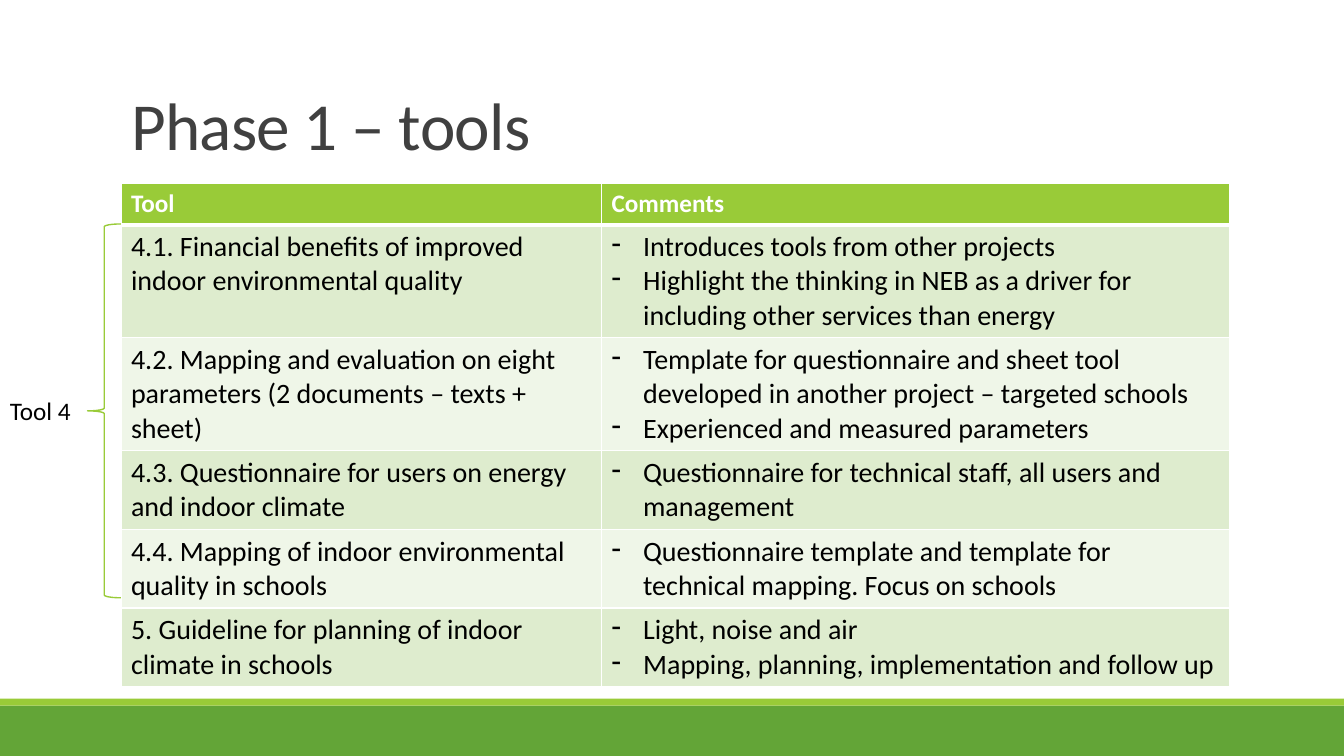
import pptx
import pptx.util
import pptx.dml.color
import pptx.enum.shapes
import pptx.enum.text
import pptx.oxml
import pptx.oxml.ns

Pt = pptx.util.Pt
qn = pptx.oxml.ns.qn

TITLE = "Phase 1 – tools"
HEADER = ("Tool", "Comments")
ROWS = [
    ("4.1. Financial benefits of improved indoor environmental quality",
     ["Introduces tools from other projects",
      "Highlight the thinking in NEB as a driver for including other services than energy"], 3),
    ("4.2. Mapping and evaluation on eight parameters (2 documents – texts + sheet)",
     ["Template for questionnaire and sheet tool developed in another project – targeted schools",
      "Experienced and measured parameters"], 3),
    ("4.3. Questionnaire for users on energy and indoor climate",
     ["Questionnaire for technical staff, all users and management"], 2),
    ("4.4. Mapping of indoor environmental quality in schools",
     ["Questionnaire template and template for technical mapping. Focus on schools"], 2),
    ("5. Guideline for planning of indoor climate in schools",
     ["Light, noise and air", "Mapping, planning, implementation and follow up"], 2),
]
BRACE_LABEL = "Tool 4"
LIME, GREEN, WHITE = "99CB38", "63A537", "FFFFFF"
BANDS = ("DEECCE", "EFF6E8")
SLIDE_W, SLIDE_H = 960, 540
TABLE_X, TABLE_Y, COL_W = 86.4, 131.04, (343.3, 448.7)
HEADER_H, LINE_H, CELL_PAD = 29.5, 24, 7.2
INDENT = 22.5


def rgb(color):
    return pptx.dml.color.RGBColor.from_string(color)


def write(p, text, size=20, color="000000", bold=False, bullet=None, spc=None):
    if bullet:
        pPr = p._p.get_or_add_pPr()
        pPr.set("marL", str(Pt(INDENT)))
        pPr.set("indent", str(-Pt(INDENT)))
        pPr.append(pptx.oxml.parse_xml(
            f'<a:buChar {pptx.oxml.ns.nsdecls("a")} char="{bullet}"/>'))
    r = p.add_run()
    r.text = text
    r.font.name = "Calibri"
    r.font.size = Pt(size)
    r.font.bold = bold
    r.font.color.rgb = rgb(color)
    if spc is not None:
        r._r.get_or_add_rPr().set("spc", str(round(spc * 100)))


def add_shape(s, kind, x, y, w, h, fill=None, line=None):
    sp = s.shapes.add_shape(kind, Pt(x), Pt(y), Pt(w), Pt(h))
    sp.shadow.inherit = False
    if fill:
        sp.fill.solid()
        sp.fill.fore_color.rgb = rgb(fill)
    else:
        sp.fill.background()
    if line:
        sp.line.color.rgb = rgb(line)
        sp.line.width = Pt(1)
    else:
        sp.line.fill.background()


def style_cell(cell, fill, top=1, bottom=1):
    tcPr = cell._tc.get_or_add_tcPr()
    for side, width in (("L", 1), ("R", 1), ("T", top), ("B", bottom)):
        tcPr.append(pptx.oxml.parse_xml(
            f'<a:ln{side} {pptx.oxml.ns.nsdecls("a")} w="{Pt(width)}"><a:solidFill>'
            f'<a:srgbClr val="{WHITE}"/></a:solidFill></a:ln{side}>'))
    cell.fill.solid()
    cell.fill.fore_color.rgb = rgb(fill)


def fill_table(s):
    heights = [HEADER_H] + [LINE_H * lines + CELL_PAD for _, _, lines in ROWS]
    table = s.shapes.add_table(len(heights), 2, Pt(TABLE_X), Pt(TABLE_Y),
                               Pt(sum(COL_W)), Pt(sum(heights))).table
    for col, width in zip(table.columns, COL_W):
        col.width = Pt(width)
    for row, height in zip(table.rows, heights):
        row.height = Pt(height)
    for c, text in enumerate(HEADER):
        cell = table.cell(0, c)
        style_cell(cell, LIME, bottom=3)
        write(cell.text_frame.paragraphs[0], text, size=18, color=WHITE, bold=True)
    for i, (tool, comments, _) in enumerate(ROWS, 1):
        for c, texts in enumerate(([tool], comments)):
            cell = table.cell(i, c)
            style_cell(cell, BANDS[(i - 1) % 2], top=3 if i == 1 else 1)
            tf = cell.text_frame
            for k, text in enumerate(texts):
                p = tf.add_paragraph() if k else tf.paragraphs[0]
                write(p, text, bullet="-" if c else None)


def main():
    prs = pptx.Presentation()
    prs.slide_width, prs.slide_height = Pt(SLIDE_W), Pt(SLIDE_H)
    s = prs.slides.add_slide(prs.slide_layouts[5])
    shapes = pptx.enum.shapes.MSO_SHAPE

    add_shape(s, shapes.RECTANGLE, 0, 504, SLIDE_W, 36, fill=GREEN)
    add_shape(s, shapes.RECTANGLE, 0, 499, SLIDE_W, 5, fill=LIME)

    title = s.shapes.title
    title.left, title.top, title.width, title.height = Pt(TABLE_X), Pt(6.5), Pt(792), Pt(114.5)
    tf = title.text_frame
    tf.auto_size = pptx.enum.text.MSO_AUTO_SIZE.NONE
    tf.vertical_anchor = pptx.enum.text.MSO_ANCHOR.BOTTOM
    p = tf.paragraphs[0]
    p.alignment = pptx.enum.text.PP_ALIGN.LEFT
    p.line_spacing = 0.85
    write(p, TITLE, size=48, color="404040", spc=-0.5)

    fill_table(s)

    add_shape(s, shapes.LEFT_BRACE, 62.6, 160, 23.8, 267, line=LIME)
    label = s.shapes.add_textbox(Pt(0), Pt(278.6), Pt(62.6), Pt(29))
    tf = label.text_frame
    tf.word_wrap = True
    tf.auto_size = pptx.enum.text.MSO_AUTO_SIZE.SHAPE_TO_FIT_TEXT
    write(tf.paragraphs[0], BRACE_LABEL, size=18)

    prs.save("out.pptx")


if __name__ == "__main__":
    main()
